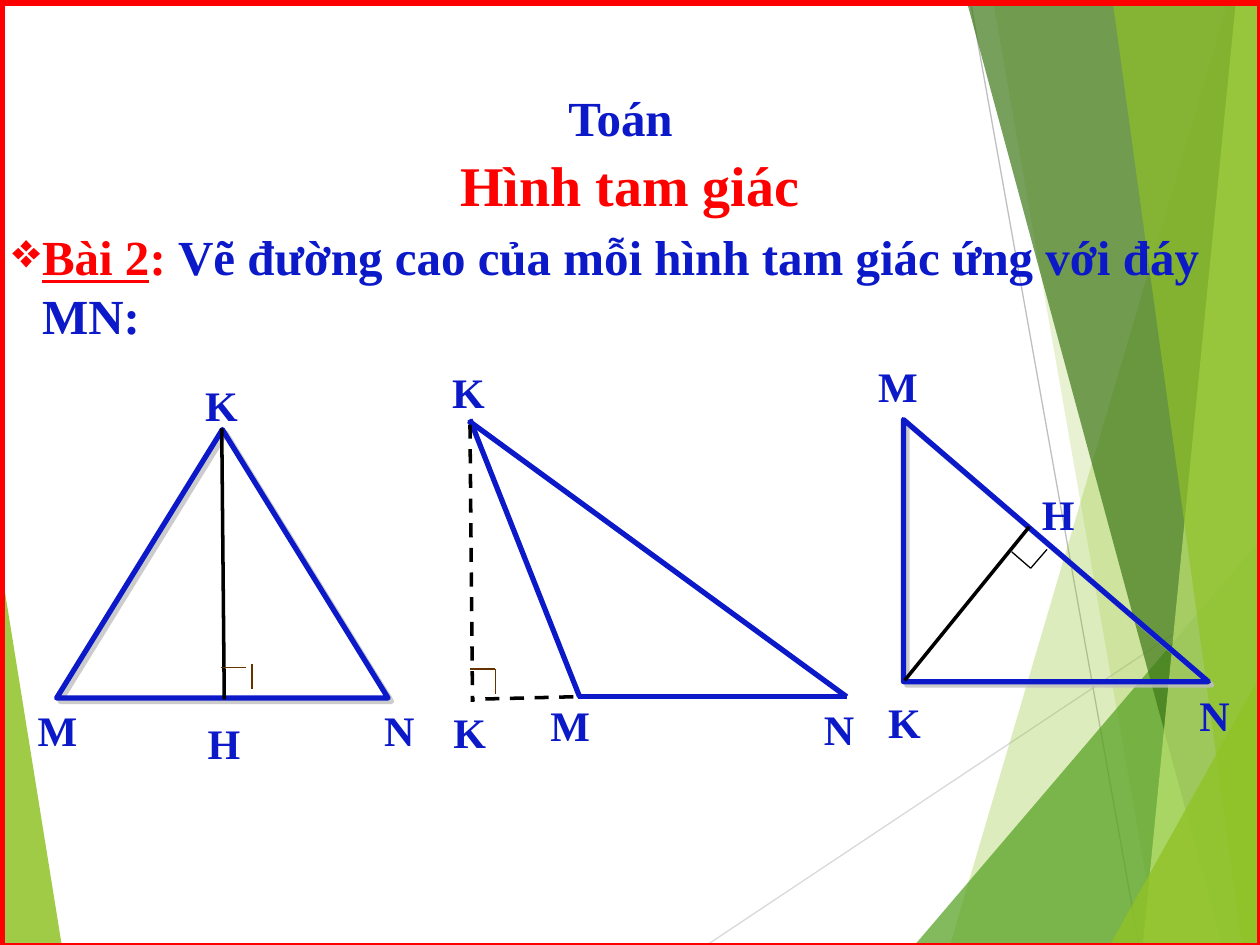
from dataclasses import dataclass
from typing import Optional

from lxml.etree import SubElement
from pptx import Presentation
from pptx.dml.color import RGBColor as Rgb
from pptx.enum.dml import MSO_LINE_DASH_STYLE as Dash
from pptx.enum.shapes import MSO_CONNECTOR as Link, MSO_SHAPE as Preset
from pptx.enum.text import MSO_ANCHOR as Anchor, MSO_AUTO_SIZE as Fit, PP_ALIGN as Align
from pptx.oxml.ns import qn
from pptx.util import Cm, Pt

COLORS = {
    "blue": "0B19C8", "red": "FF0000", "black": "000000", "brown": "663300",
    "shadow": "C0C0C0", "lime": "90C226", "green": "54A021", "forest": "3F7819",
    "pale": "C0E474", "gray": "BFBFBF", "silver": "D9D9D9",
}
FRAME_FORMAT = {
    "word_wrap": True, "auto_size": Fit.NONE, "vertical_anchor": Anchor.TOP,
    "margin_left": Cm(0.25), "margin_right": Cm(0.25),
    "margin_top": Cm(0.13), "margin_bottom": Cm(0.13),
}


@dataclass
class Facet:
    color: str
    opacity: int
    points: list


@dataclass
class Stroke:
    start: tuple
    end: tuple
    color: str
    weight: float
    dashed: bool = False


@dataclass
class Label:
    letter: str
    left: float
    top: float


@dataclass
class Triangle:
    preset: int
    bounds: tuple


# Background facets, with points in inches
FACETS = [
    Facet("lime", 30, [(9.75, 0), (7.54, 7.5), (10.02, 7.5), (10.02, 0)]),
    Facet("lime", 20, [(7.88, 0), (9.19, 7.5), (10.01, 7.5), (10.01, 0)]),
    Facet("green", 72, [(7.26, 7.5), (10, 4.29), (10.01, 7.5)]),
    Facet("forest", 70, [(7.67, 0), (9.7, 7.5), (10.01, 7.5), (10.01, 0)]),
    Facet("pale", 70, [(9.81, 0), (9.07, 7.5), (10.01, 7.5), (10, 0)]),
    Facet("lime", 65, [(8.83, 0), (9.86, 7.5), (10, 7.5), (9.98, 0)]),
    Facet("lime", 80, [(8.81, 7.5), (10.01, 5.35), (10.01, 7.5)]),
]
LEFT_FACET = Facet("lime", 85, [(-0.01, 4.39), (0.49, 7.5), (-0.01, 7.5)])
RAYS = [
    Stroke((5.61, 7.5), (10.01, 4.57), "silver", 0.75),
    Stroke((7.7, 0), (9.04, 7.5), "gray", 0.75),
]

# Geometry of the three exercises
TRIANGLES = [
    Triangle(Preset.ISOSCELES_TRIANGLE, (0.45, 3.41, 2.63, 2.13)),
    Triangle(Preset.RIGHT_TRIANGLE, (7.17, 3.33, 2.42, 2.08)),
]
STROKES = [
    # Obtuse triangle
    Stroke((3.73, 3.33), (4.6, 5.53), "blue", 3),
    Stroke((3.72, 3.34), (6.72, 5.53), "blue", 3),
    Stroke((4.59, 5.53), (6.72, 5.53), "blue", 3),
    # Altitudes
    Stroke((1.76, 3.4), (1.78, 5.55), "black", 2),
    Stroke((3.73, 3.37), (3.75, 5.57), "black", 2, True),
    Stroke((4.55, 5.53), (3.75, 5.55), "black", 2, True),
    Stroke((8.17, 4.18), (7.18, 5.4), "black", 2),
    # Right-angle marks
    Stroke((1.75, 5.3), (1.95, 5.3), "brown", 0.75),
    Stroke((2, 5.27), (2, 5.47), "brown", 0.75),
    Stroke((3.73, 5.31), (3.93, 5.31), "brown", 0.75),
    Stroke((3.93, 5.31), (3.93, 5.51), "brown", 0.75),
    Stroke((8.31, 4.36), (8.18, 4.51), "black", 0.75),
    Stroke((8.18, 4.51), (8.03, 4.38), "black", 0.75),
]
LABELS = [
    Label("K", 1.53, 2.96), Label("M", 0.2, 5.54),
    Label("N", 2.95, 5.54), Label("H", 1.55, 5.64),
    Label("K", 3.49, 2.86), Label("M", 4.27, 5.5),
    Label("N", 6.44, 5.53), Label("K", 3.5, 5.56),
    Label("M", 6.87, 2.81), Label("K", 6.95, 5.48),
    Label("N", 9.42, 5.42), Label("H", 8.17, 3.83),
]


def inch(*values: float) -> list:
    return [Cm(value * 2.54) for value in values]


def rgb(name: str) -> Rgb:
    return Rgb.from_string(COLORS[name])


def apply_format(target, values: dict) -> None:
    for name, value in values.items():
        setattr(target, name, value)


def draw_facet(page, facet: Facet) -> None:
    corners = [inch(*point) for point in facet.points]
    builder = page.shapes.build_freeform(*corners[0])
    builder.add_line_segments(corners[1:], close=True)
    shape = builder.convert_to_shape()
    shape.shadow.inherit = False
    shape.line.fill.background()
    shape.fill.solid()
    shape.fill.fore_color.rgb = rgb(facet.color)
    tint = shape._element.spPr.find(".//" + qn("a:srgbClr"))
    SubElement(tint, qn("a:alpha"), val=str(facet.opacity * 1000))


def draw_stroke(page, stroke: Stroke) -> None:
    line = page.shapes.add_connector(Link.STRAIGHT, *inch(*stroke.start, *stroke.end))
    line.line.color.rgb = rgb(stroke.color)
    line.line.width = Pt(stroke.weight)
    if stroke.dashed:
        line.line.dash_style = Dash.DASH
    SubElement(line._element.spPr, qn("a:effectLst"))


def draw_outline(page, preset: int, bounds: tuple, color: str, weight: float):
    shape = page.shapes.add_shape(preset, *inch(*bounds))
    shape.shadow.inherit = False
    shape.fill.background()
    shape.line.color.rgb = rgb(color)
    shape.line.width = Pt(weight)
    return shape


def draw_triangle(page, triangle: Triangle) -> None:
    shape = draw_outline(page, triangle.preset, triangle.bounds, "blue", 3)
    effects = shape._element.spPr.find(qn("a:effectLst"))
    shadow = SubElement(effects, qn("a:outerShdw"), dist=str(Pt(2.8)),
                        dir=str(45 * 60000), algn="ctr", rotWithShape="0")
    tint = SubElement(shadow, qn("a:srgbClr"), val=COLORS["shadow"])
    SubElement(tint, qn("a:alpha"), val="80000")


def write(box, spans: list, size: int, align=Align.LEFT):
    """Fill a box with one paragraph of (text, color, underline) spans."""
    apply_format(box.text_frame, FRAME_FORMAT)
    para = box.text_frame.paragraphs[0]
    para.alignment = align
    for text, color, underline in spans:
        span = para.add_run()
        span.text = text
        apply_format(span.font, {"name": "Times New Roman", "size": Pt(size),
                                 "bold": True, "underline": underline})
        span.font.color.rgb = rgb(color)
    return para


def add_text(page, bounds: tuple, spans: list, size: int, align: Optional[int] = Align.LEFT):
    return write(page.shapes.add_textbox(*inch(*bounds)), spans, size, align)


def main() -> None:
    deck = Presentation()
    deck.slide_width, deck.slide_height = inch(10, 7.5)
    page = deck.slides.add_slide(deck.slide_layouts[5])

    # Background
    draw_facet(page, LEFT_FACET)
    for ray in RAYS:
        draw_stroke(page, ray)
    for facet in FACETS:
        draw_facet(page, facet)

    # Headings and task
    title = page.shapes.title
    apply_format(title, dict(zip(("left", "top", "width", "height"), inch(0, 1.14, 10, 0.64))))
    write(title, [("Hình tam giác", "red", False)], 32, Align.CENTER)
    add_text(page, (0.05, 0.64, 9.75, 0.54), [("Toán", "blue", False)], 28, Align.CENTER)
    task = add_text(page, (0, 1.75, 10, 1.04), [
        ("Bài 2", "red", True), (": ", "red", False),
        ("Vẽ đường cao của mỗi hình tam giác ứng với đáy MN:", "blue", False)], 28)
    properties = task._p.get_or_add_pPr()
    properties.set("marL", str(Cm(0.6)))
    properties.set("indent", str(-Cm(0.6)))
    SubElement(properties, qn("a:buChar"), char="❖")

    # Triangles, altitudes and vertex names
    for triangle in TRIANGLES:
        draw_triangle(page, triangle)
    for stroke in STROKES:
        draw_stroke(page, stroke)
    for label in LABELS:
        add_text(page, (label.left, label.top, 0.42, 0.5), [(label.letter, "blue", False)], 24)

    # Page frame
    draw_outline(page, Preset.RECTANGLE, (0.01, 0.02, 10, 7.5), "red", 4.5)
    deck.save("out.pptx")


if __name__ == "__main__":
    main()
